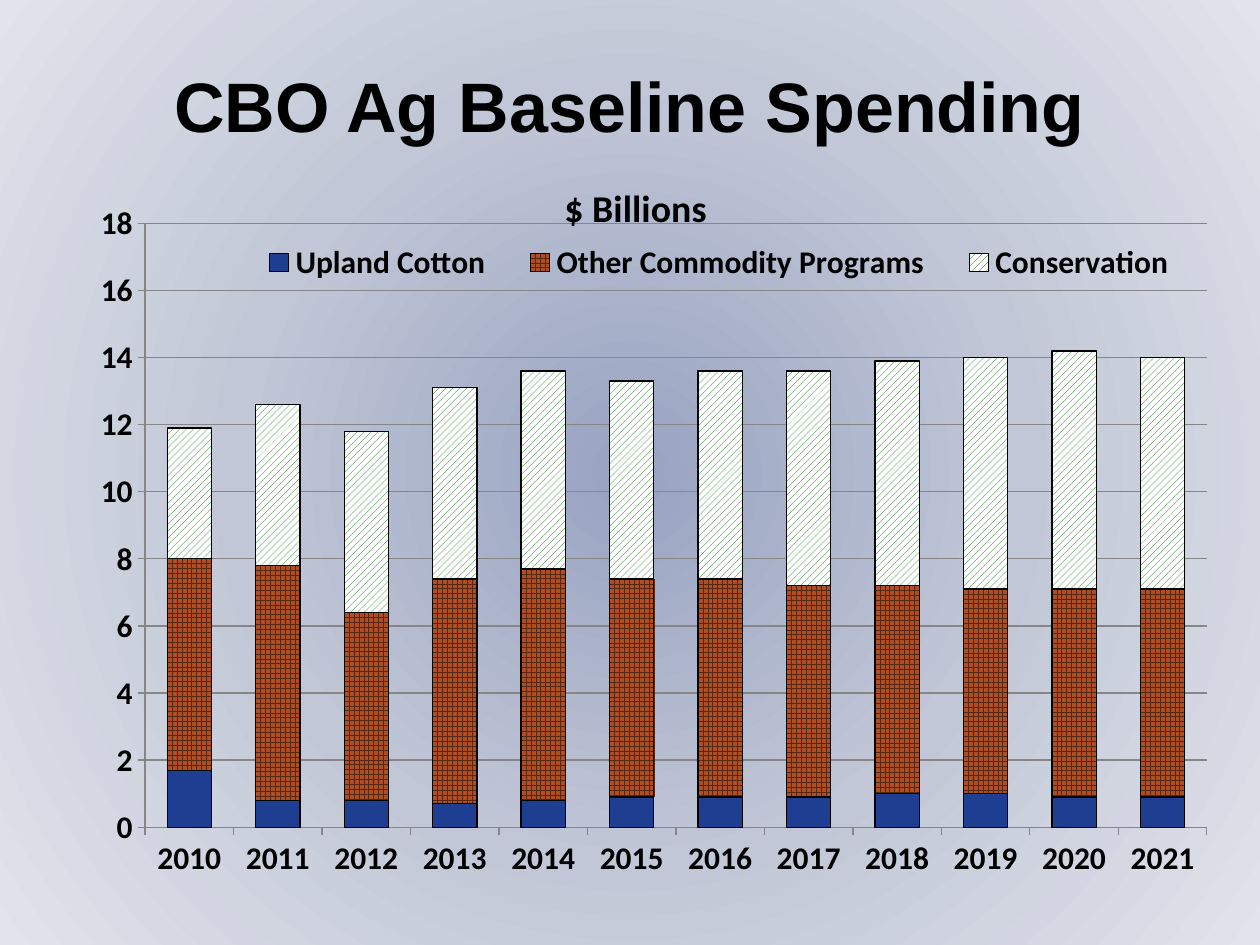
from dataclasses import dataclass
from typing import Optional

from lxml.etree import SubElement
from pptx import Presentation
from pptx.chart.data import CategoryChartData
from pptx.dml.color import RGBColor
from pptx.enum.chart import XL_CHART_TYPE, XL_LEGEND_POSITION, XL_TICK_LABEL_POSITION, XL_TICK_MARK
from pptx.enum.dml import MSO_PATTERN
from pptx.enum.text import MSO_ANCHOR, PP_ALIGN
from pptx.oxml.ns import qn
from pptx.util import Inches, Pt


@dataclass(frozen=True)
class Theme:
    ink: str = "000000"
    grid: str = "868686"
    glow: tuple = ((0, "98A3C1"), (50, "C2C7D7"), (100, "E1E4EB"))
    heading_font: str = "Arial"
    chart_font: str = "Calibri"
    heading_size: float = 40
    chart_title_size: float = 21.6
    chart_size: float = 18
    outline: float = 0.75


@dataclass(frozen=True)
class Area:
    left: float
    top: float
    width: Optional[float] = None
    height: Optional[float] = None


@dataclass(frozen=True)
class Spending:
    name: str
    values: tuple
    color: str
    pattern: Optional[MSO_PATTERN] = None
    hatch: str = ""


THEME = Theme()
WIDTH, HEIGHT = Inches(10), Inches(7.5)
HEADING = Area(0.025, 0.044, 0.949, 0.133)
CHART = Area(0.025, 0.144, 0.949, 0.811)
PLOT = Area(0.095, 0.114, 0.888, 0.788)
LEGEND = Area(0.17, 0.13, 0.81, 0.07)
CHART_TITLE = Area(0.44, 0.05)
YEARS = [str(year) for year in range(2010, 2022)]
PROGRAMS = (
    Spending("Upland Cotton",
             (1.7, 0.8, 0.8, 0.7, 0.8, 0.9, 0.9, 0.9, 1, 1, 0.9, 0.9), "1E3E92"),
    Spending("Other Commodity Programs",
             (6.3, 7, 5.6, 6.7, 6.9, 6.5, 6.5, 6.3, 6.2, 6.1, 6.2, 6.2),
             "AE4E22", MSO_PATTERN.LARGE_GRID, "572711"),
    Spending("Conservation",
             (3.9, 4.8, 5.4, 5.7, 5.9, 5.9, 6.2, 6.4, 6.7, 6.9, 7.1, 6.9),
             "FFFFFF", MSO_PATTERN.WIDE_UPWARD_DIAGONAL, "006600"),
)


def rgb(value: str) -> RGBColor:
    return RGBColor.from_string(value)


def on_slide(area: Area) -> tuple:
    return (int(WIDTH * area.left), int(HEIGHT * area.top),
            int(WIDTH * area.width), int(HEIGHT * area.height))


def style_font(font, name: str, size: float) -> None:
    font.name, font.size, font.bold = name, Pt(size), True
    font.color.rgb = rgb(THEME.ink)


def paint_background(page) -> None:
    page.background.fill.gradient()
    gradient = page.element.find(".//" + qn("a:gradFill"))
    for child in list(gradient):
        gradient.remove(child)
    stops = SubElement(gradient, qn("a:gsLst"))
    for position, color in THEME.glow:
        stop = SubElement(stops, qn("a:gs"), pos=str(position * 1000))
        SubElement(stop, qn("a:srgbClr"), val=color)
    circle = SubElement(gradient, qn("a:path"), path="circle")
    SubElement(circle, qn("a:fillToRect"), l="50000", t="50000", r="50000", b="50000")


def add_heading(page, text: str) -> None:
    frame = page.shapes.add_textbox(*on_slide(HEADING)).text_frame
    frame.word_wrap = True
    frame.vertical_anchor = MSO_ANCHOR.MIDDLE
    para = frame.paragraphs[0]
    para.alignment = PP_ALIGN.CENTER
    span = para.add_run()
    span.text = text
    style_font(span.font, THEME.heading_font, THEME.heading_size)


def place(element, index: int, area: Area, inner: bool = False) -> None:
    for old in element.findall(qn("c:layout")):
        element.remove(old)
    layout = SubElement(element, qn("c:layout"))
    element.insert(index, layout)
    manual = SubElement(layout, qn("c:manualLayout"))
    if inner:
        SubElement(manual, qn("c:layoutTarget"), val="inner")
    for mode in ("xMode", "yMode"):
        SubElement(manual, qn("c:" + mode), val="edge")
    for tag, share in zip("xywh", (area.left, area.top, area.width, area.height)):
        if share is not None:
            SubElement(manual, qn("c:" + tag), val=str(share))


def style_series(series, program: Spending) -> None:
    fill = series.format.fill
    if program.pattern is None:
        fill.solid()
        fill.fore_color.rgb = rgb(program.color)
    else:
        fill.patterned()
        fill.pattern = program.pattern
        fill.fore_color.rgb = rgb(program.hatch)
        fill.back_color.rgb = rgb(program.color)
    series.invert_if_negative = False
    series.format.line.color.rgb = rgb(THEME.ink)
    series.format.line.width = Pt(THEME.outline)


def style_axes(chart) -> None:
    values, years = chart.value_axis, chart.category_axis
    values.minimum_scale, values.maximum_scale, values.major_unit = 0, 18, 2
    values.has_major_gridlines = True
    years.tick_label_position = XL_TICK_LABEL_POSITION.LOW
    for axis in (values, years):
        axis.major_tick_mark = XL_TICK_MARK.OUTSIDE
        axis.minor_tick_mark = XL_TICK_MARK.NONE
    for part in (values, years, values.major_gridlines):
        part.format.line.color.rgb = rgb(THEME.grid)
        part.format.line.width = Pt(THEME.outline)
    values.tick_labels.number_format = "0"
    values.tick_labels.number_format_is_linked = False


def add_spending_chart(page) -> None:
    data = CategoryChartData()
    data.categories = YEARS
    for program in PROGRAMS:
        data.add_series(program.name, program.values)
    chart = page.shapes.add_chart(
        XL_CHART_TYPE.COLUMN_STACKED, *on_slide(CHART), data).chart
    style_font(chart.font, THEME.chart_font, THEME.chart_size)

    chart.has_title = True
    span = chart.chart_title.text_frame.paragraphs[0].add_run()
    span.text = "$ Billions"
    style_font(span.font, THEME.chart_font, THEME.chart_title_size)

    chart.has_legend = True
    chart.legend.position = XL_LEGEND_POSITION.TOP
    chart.legend.include_in_layout = False

    plot = chart.plots[0]
    plot.gap_width, plot.overlap, plot.vary_by_categories = 100, 100, False
    for series, program in zip(plot.series, PROGRAMS):
        style_series(series, program)
    style_axes(chart)

    plot_area = chart.element.find(".//" + qn("c:plotArea"))
    place(plot_area, 0, PLOT, inner=True)
    place(plot_area.getparent().find(qn("c:title")), 1, CHART_TITLE)
    place(plot_area.getparent().find(qn("c:legend")), 1, LEGEND)


def main() -> None:
    deck = Presentation()
    deck.slide_width, deck.slide_height = WIDTH, HEIGHT
    page = deck.slides.add_slide(deck.slide_layouts[6])
    paint_background(page)
    add_heading(page, "CBO Ag Baseline Spending")
    add_spending_chart(page)
    deck.save("out.pptx")


if __name__ == "__main__":
    main()
